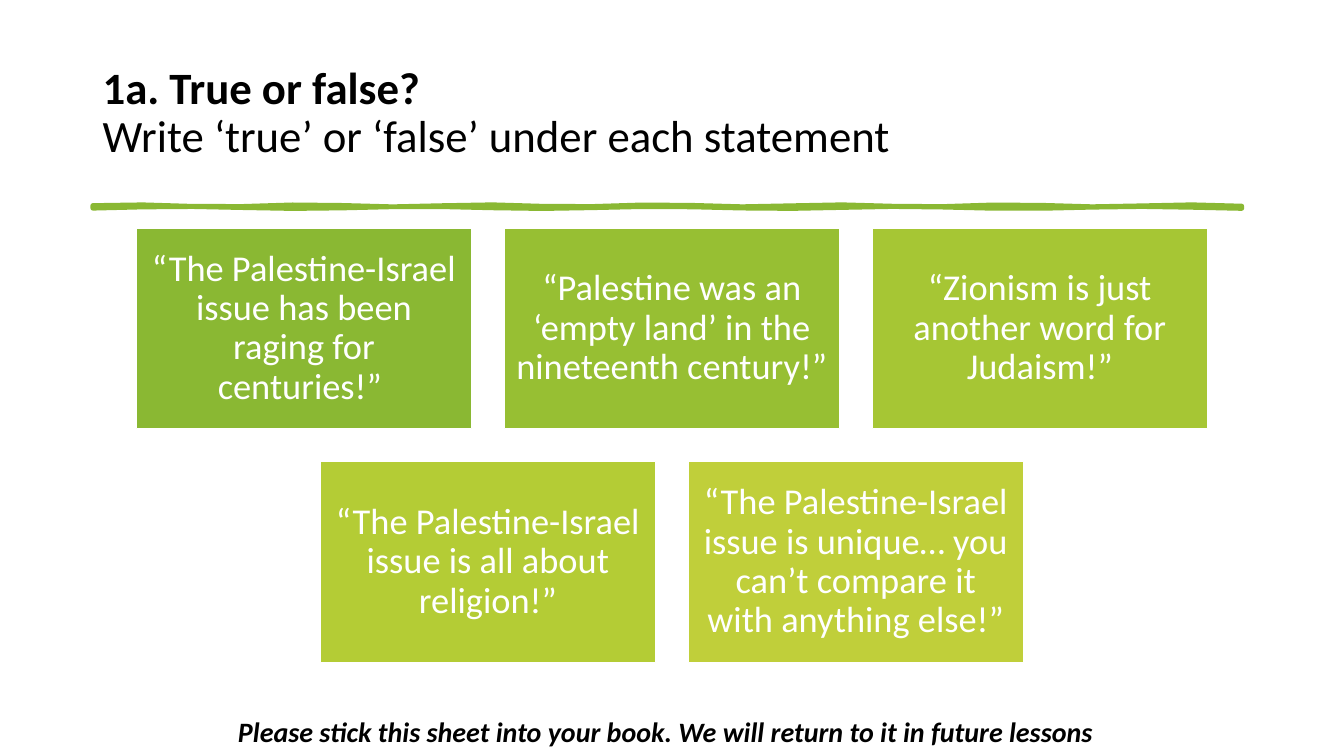
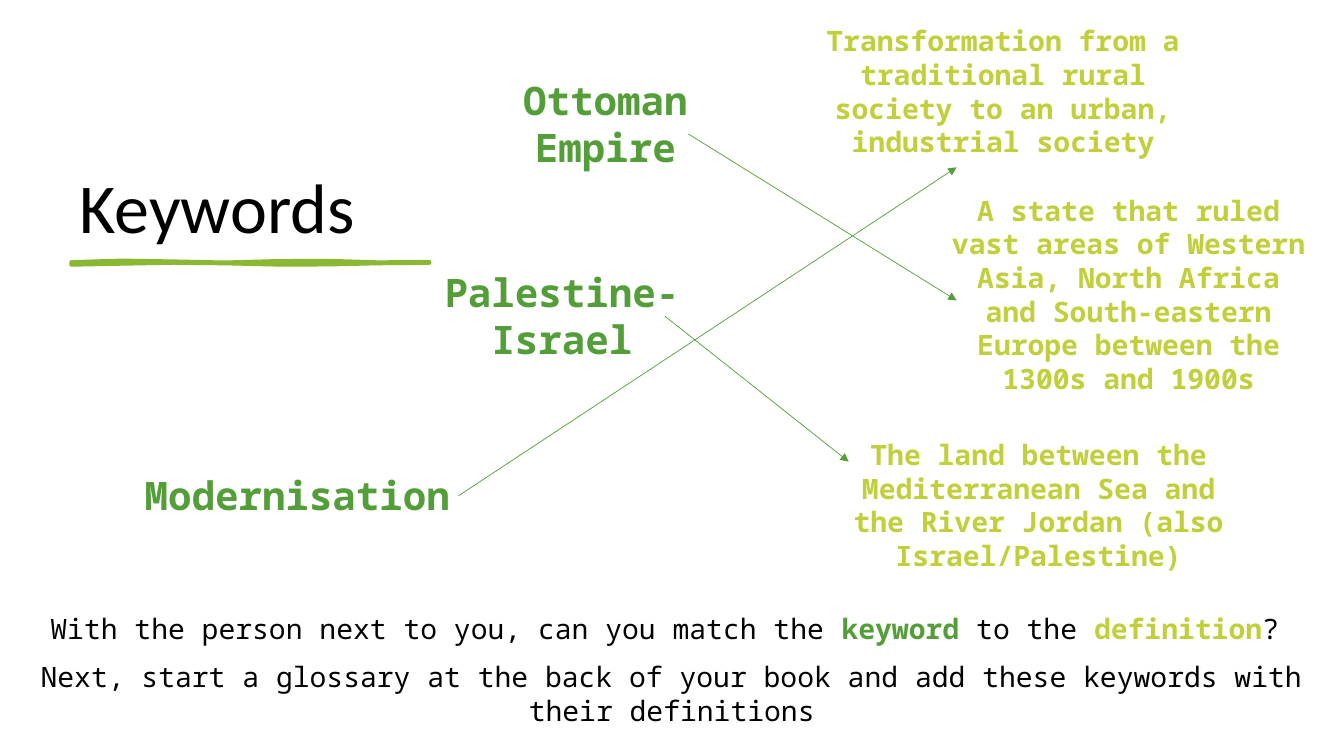
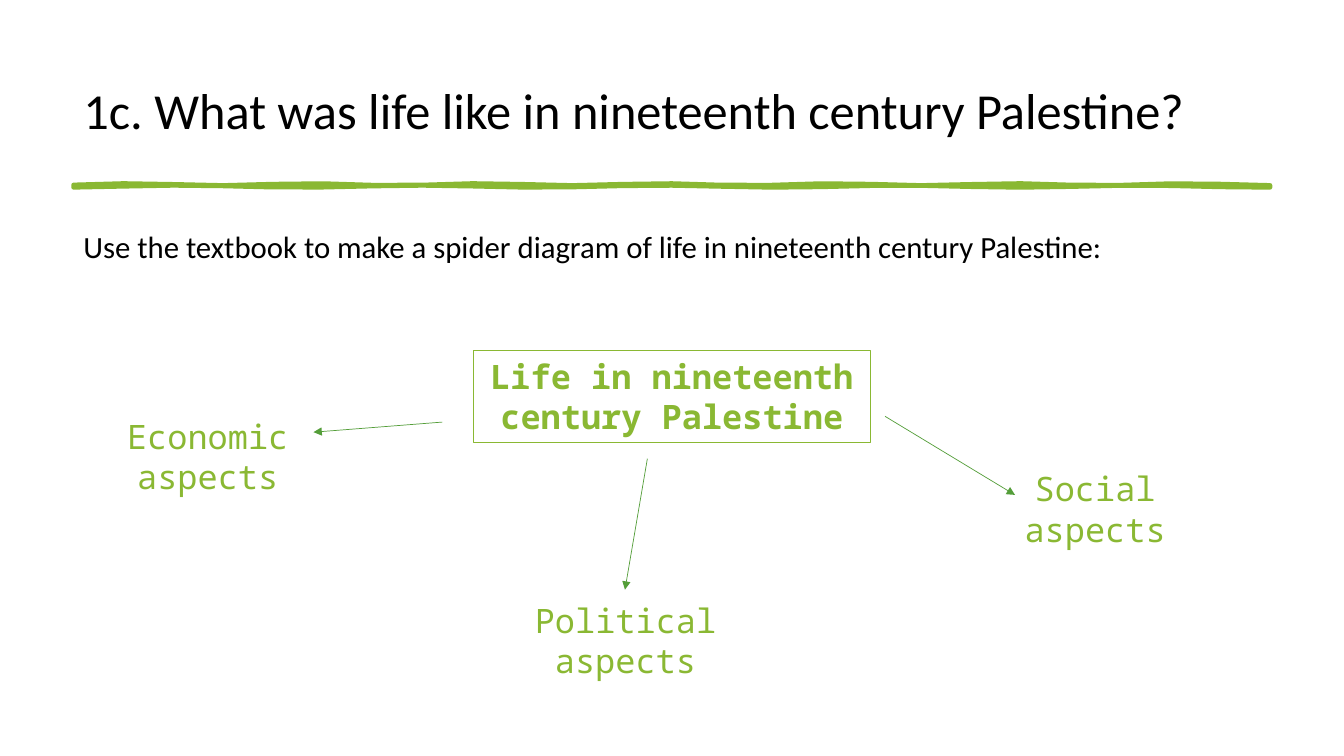
import math

from lxml import etree
from pptx import Presentation, util as u
from pptx.dml.color import RGBColor
from pptx.enum import shapes, text
from pptx.oxml.ns import qn

# The slide is a grid of 160 columns and 90 rows of square cells.
COLUMNS, ROWS = 160, 90
CELL = u.Inches(1 / 12)

BLACK, WHITE = "000000", "FFFFFF"
GREEN, LEAF, LIME = "549E39", "8AB833", "C0CF3A"
CARD_COLOURS = [LEAF, "97BF33", "A6C634", "B4CC35", LIME]

SANS, MONO = "Calibri", "Noto Sans Mono"
TITLE = dict(name=SANS, size=u.Pt(36))
TASK = dict(name=SANS, size=u.Pt(22))
CARD = dict(name=SANS, size=u.Pt(26))
REMINDER = dict(name=SANS, size=u.Pt(20), bold=True, italic=True)
KEYWORD = dict(name=MONO, size=u.Pt(28), bold=True)
DEFINITION = dict(name=MONO, size=u.Pt(20), bold=True)
INSTRUCTION = dict(name=MONO, size=u.Pt(20))
ASPECT = dict(name=MONO, size=u.Pt(24))
TOPIC = dict(ASPECT, bold=True)

LEFT, CENTRE = text.PP_ALIGN.LEFT, text.PP_ALIGN.CENTER
TOP, MIDDLE, BOTTOM = (text.MSO_ANCHOR.TOP, text.MSO_ANCHOR.MIDDLE,
                       text.MSO_ANCHOR.BOTTOM)


def paint(fill, colour):
    fill.solid()
    fill.fore_color.rgb = RGBColor.from_string(colour)


def write(slide, box, runs, style, align=CENTRE, anchor=TOP, fill=None, line=None, inset=1.2):
    """Put runs of (words, colour, changes to the style) in a box given in cells."""
    place = [round(length * CELL) for length in box]
    if fill:
        panel = slide.shapes.add_shape(shapes.MSO_SHAPE.RECTANGLE, *place)
        panel.shadow.inherit = False
        paint(panel.fill, fill)
    else:
        panel = slide.shapes.add_textbox(*place)
    if line:
        colour, points = line
        paint(panel.line.fill, colour)
        panel.line.width = u.Pt(points)

    frame = panel.text_frame
    side, end = round(inset * CELL), round(0.6 * CELL)
    for key, value in dict(word_wrap=True, vertical_anchor=anchor, margin_left=side,
                           margin_right=side, margin_top=end, margin_bottom=end).items():
        setattr(frame, key, value)
    paragraph = frame.paragraphs[0]
    paragraph.alignment = align
    if style["name"] == SANS:
        paragraph.line_spacing = 0.9
    for words, colour, changes in runs:
        if words == "\n":
            paragraph.add_line_break()
            continue
        run = paragraph.add_run()
        run.text = words
        for key, value in {**style, **changes}.items():
            setattr(run.font, key, value)
        paint(run.font.fill, colour)


deck = Presentation()
deck.slide_width, deck.slide_height = COLUMNS * CELL, ROWS * CELL

# Each slide: title box, title runs, size, anchor, then left, top, width and weight of the rule.
HEADINGS = [
    ((11.04, 4.85, 138, 17.4),
     [("1a. True or false?", BLACK, dict(bold=True)), ("\n", BLACK, {}),
      ("Write ‘true’ or ‘false’ under each statement", BLACK, {})],
     32, MIDDLE, (11.04, 24.48, 136.8, 3.25)),
    ((8.28, 10.8, 77.28, 19.44), [("Keywords", BLACK, {})], 50, BOTTOM,
     (8.5, 31.15, 42.6, 3)),
    ((8.76, 4.8, 150, 17.4),
     [("1c. What was life like in nineteenth century Palestine?", BLACK, {})],
     36, MIDDLE, (8.76, 21.96, 142.44, 3.25)),
]
for box, runs, size, anchor, (left, top, width, weight) in HEADINGS:
    slide = deck.slides.add_slide(deck.slide_layouts[6])
    write(slide, box, runs, dict(TITLE, size=u.Pt(size)), LEFT, anchor)

    # Hand-drawn rule: two waves of different length, one along each edge.
    steps = round(width / 6)
    across = [left + width * step / steps for step in range(steps + 1)]
    upper = [(x, top + 0.12 * math.sin(0.3 * x)) for x in across]
    lower = [(x, top + 0.24 + 0.12 * math.sin(0.22 * x)) for x in across]
    outline = [(round(x * CELL), round(y * CELL)) for x, y in upper + lower[::-1]]
    builder = slide.shapes.build_freeform(*outline[0])
    builder.add_line_segments(outline[1:], close=True)
    rule = builder.convert_to_shape()
    rule.shadow.inherit = False
    paint(rule.fill, LEAF)
    paint(rule.line.fill, LEAF)
    rule.line.width = u.Pt(weight)

statements, keywords, spider = deck.slides

# True or false: rows of cards, each row centred on the slide.
CARD_WIDTH, CARD_HEIGHT, GAP, FIRST_ROW = 39.9, 23.9, 3.9, 27.15
CLAIMS = [
    ["“The Palestine-Israel issue has been raging for centuries!” ",
     "“Palestine was an ‘empty land’ in the nineteenth century!”",
     "“Zionism is just another word for Judaism!”"],
    ["“The Palestine-Israel issue is all about religion!”",
     "“The Palestine-Israel issue is unique… you can’t compare it with anything else!”"],
]
card_colours = iter(CARD_COLOURS)
for row, claims in enumerate(CLAIMS):
    row_width = len(claims) * (CARD_WIDTH + GAP) - GAP
    for column, claim in enumerate(claims):
        box = ((COLUMNS - row_width) / 2 + column * (CARD_WIDTH + GAP),
               FIRST_ROW + row * (CARD_HEIGHT + GAP), CARD_WIDTH, CARD_HEIGHT)
        write(statements, box, [(claim, WHITE, {})], CARD, anchor=MIDDLE,
              fill=next(card_colours), line=(WHITE, 1), inset=1.3)
write(statements, (0.6, 82.44, 157.3, 9.84),
      [("Please stick this sheet into your book. We will return to it in future lessons",
        BLACK, {})], REMINDER, anchor=MIDDLE)

# Keywords and their definitions.
for box, word, align in [
    ((53.12, 8.45, 37.92, 12.48), "Ottoman Empire", CENTRE),
    ((47.95, 31.3, 37.92, 12.48), "Palestine-Israel", CENTRE),
    ((16.05, 55.56, 56.88, 6.84), "Modernisation", LEFT),
]:
    write(keywords, box, [(word, GREEN, {})], KEYWORD, align)
for box, meaning in [
    ((93.45, 2.25, 51.96, 17.4),
     "Transformation from a traditional rural society to an urban, industrial society"),
    ((111.33, 22.42, 46.08, 25.44),
     "A state that ruled vast areas of Western Asia, North Africa and South-eastern "
     "Europe between the 1300s and 1900s"),
    ((97.92, 51.48, 51.48, 17.4),
     "The land between the Mediterranean Sea and the River Jordan (also Israel/Palestine)"),
]:
    write(keywords, box, [(meaning, LIME, {})], DEFINITION)
write(keywords, (1.15, 72.2, 156, 13.32),
      [("With the person next to you, can you match the ", BLACK, {}),
       ("keyword ", GREEN, dict(bold=True)), ("to the ", BLACK, {}),
       ("definition", LIME, dict(bold=True)), ("?", BLACK, {})], INSTRUCTION)
write(keywords, (2.28, 77.95, 155.4, 12),
      [("Next, start a glossary at the back of your book and add these keywords "
        "with their definitions", BLACK, {})], INSTRUCTION)

# Spider diagram.
write(spider, (8.76, 27, 149.04, 55.8),
      [("Use the textbook to make a spider diagram of life in nineteenth century Palestine:",
        BLACK, {})], TASK, LEFT)
write(spider, (56.33, 41.73, 47.28, 10.92),
      [("Life in nineteenth century Palestine", LEAF, {})], TOPIC, line=(LEAF, 0.75))
for left, top, width, aspect in [
    (6.6, 48.93, 36.24, "Economic aspects"),
    (119.16, 55.15, 22.44, "Social aspects"),
    (61.92, 70.8, 25.08, "Political aspects"),
]:
    write(spider, (left, top, width, 10.92), [(aspect, LEAF, {})], ASPECT)

# Arrows from keyword to definition, and from topic to aspect.
for slide, *ends in [
    (keywords, 81.95, 15.95, 113.88, 35.76),
    (keywords, 54.57, 59.04, 113.88, 19.92),
    (keywords, 79.17, 37.65, 101.04, 54.96),
    (spider, 52.65, 50.25, 37.32, 51.45),
    (spider, 105.36, 49.56, 120.84, 58.92),
    (spider, 77.07, 54.6, 74.4, 70.2),
]:
    arrow = slide.shapes.add_connector(shapes.MSO_CONNECTOR.STRAIGHT,
                                       *[round(end * CELL) for end in ends])
    paint(arrow.line.fill, GREEN)
    arrow.line.width = u.Pt(0.5)
    properties = arrow._element.spPr
    etree.SubElement(properties.find(qn("a:ln")), qn("a:tailEnd"), type="triangle")
    etree.SubElement(properties, qn("a:effectLst"))

deck.save("out.pptx")
